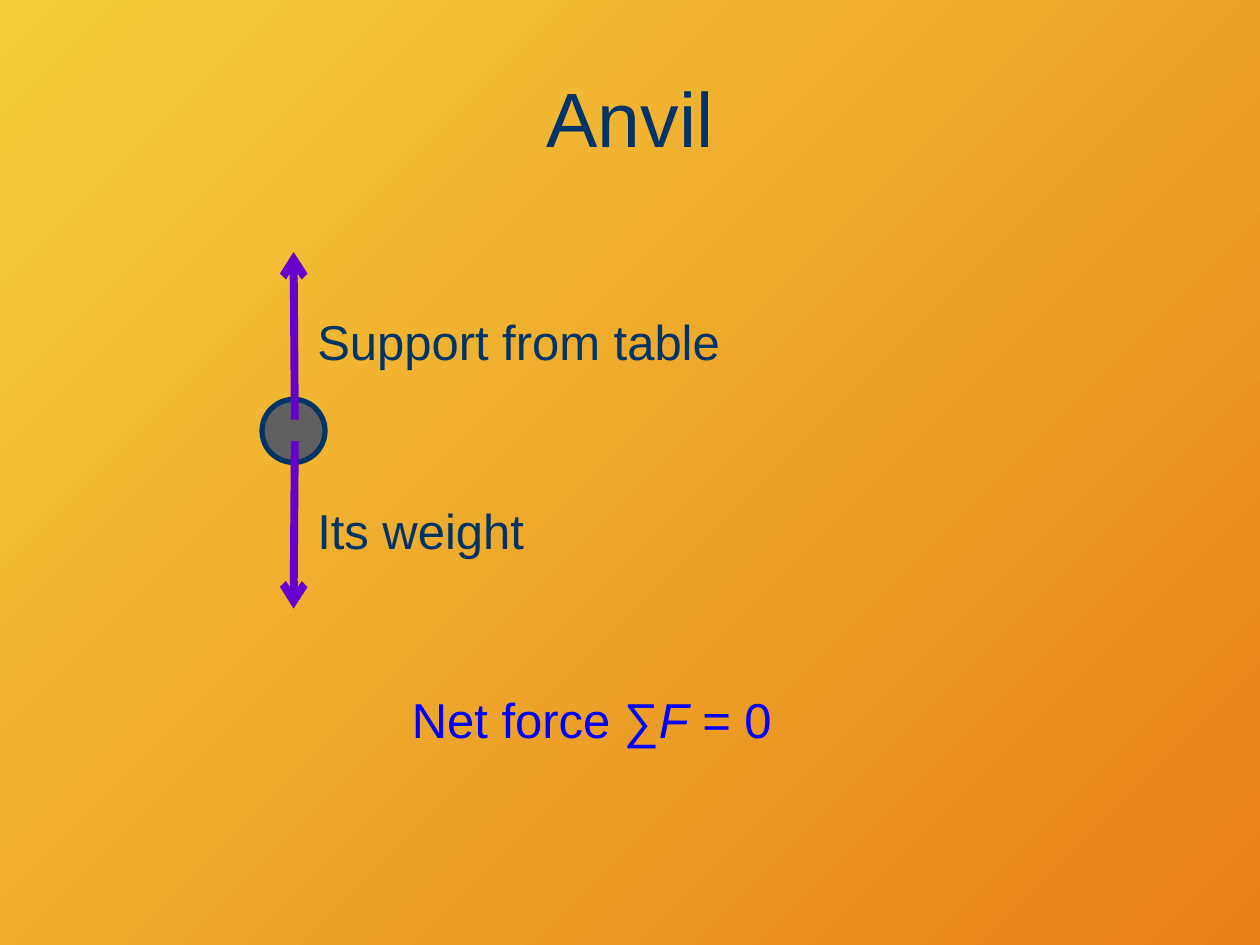
from dataclasses import dataclass

from lxml.etree import SubElement
from pptx import Presentation
from pptx.dml.color import RGBColor
from pptx.enum.shapes import MSO_CONNECTOR, MSO_SHAPE
from pptx.enum.text import MSO_ANCHOR, MSO_AUTO_SIZE, PP_ALIGN
from pptx.oxml.ns import qn
from pptx.slide import Slide
from pptx.util import Inches, Pt


@dataclass(frozen=True)
class Theme:
    font: str = "Arial"
    title_size: int = 44
    body_size: int = 28
    ink: str = "003366"
    force: str = "6600CC"
    result: str = "0000FF"
    anvil: str = "606060"
    glow: str = "F5CE3D"
    ember: str = "E88018"


@dataclass(frozen=True)
class Force:
    label: str
    label_top: float
    label_width: float
    start_y: float
    tip_y: float


THEME = Theme()
LABEL_LEFT, LABEL_HEIGHT = 2.42, 0.57
FORCE_START_X, FORCE_TIP_X = 2.34, 2.33
FORCES = (
    Force("Its weight", 3.92, 1.86, 3.5, 4.83),
    Force("Support from table", 2.42, 3.44, 3.33, 2),
)


def rgb(code: str) -> RGBColor:
    return RGBColor.from_string(code)


def paint_background(slide: Slide) -> None:
    fill = slide.background.fill
    fill.gradient()
    fill.gradient_angle = 315  # counter-clockwise: top left to bottom right
    for stop, color in zip(fill.gradient_stops, (THEME.glow, THEME.ember)):
        stop.color.rgb = rgb(color)


def add_text(slide: Slide, *runs: str, left: float, top: float, width: float,
             height: float = LABEL_HEIGHT, size: int = THEME.body_size,
             color: str = THEME.ink, align: PP_ALIGN = PP_ALIGN.LEFT,
             anchor: MSO_ANCHOR = MSO_ANCHOR.TOP, wrap: bool = False,
             italic_run: str = "") -> None:
    """Write the runs as one paragraph; the run equal to italic_run is italic."""
    box = slide.shapes.add_textbox(Inches(left), Inches(top), Inches(width), Inches(height))
    frame = box.text_frame
    frame.word_wrap = wrap
    frame.auto_size = MSO_AUTO_SIZE.NONE if wrap else MSO_AUTO_SIZE.SHAPE_TO_FIT_TEXT
    frame.vertical_anchor = anchor
    paragraph = frame.paragraphs[0]
    paragraph.alignment = align
    for text in runs:
        run = paragraph.add_run()
        run.text = text
        run.font.name = THEME.font
        run.font.size = Pt(size)
        run.font.italic = text == italic_run
        run.font.color.rgb = rgb(color)


def add_anvil(slide: Slide) -> None:
    anvil = slide.shapes.add_shape(MSO_SHAPE.OVAL, Inches(2.08), Inches(3.17),
                                   Inches(0.5), Inches(0.5))
    anvil.shadow.inherit = False
    anvil.fill.solid()
    anvil.fill.fore_color.rgb = rgb(THEME.anvil)
    anvil.line.color.rgb = rgb(THEME.ink)
    anvil.line.width = Pt(3)


def add_force(slide: Slide, force: Force) -> None:
    arrow = slide.shapes.add_connector(
        MSO_CONNECTOR.STRAIGHT, Inches(FORCE_START_X), Inches(force.start_y),
        Inches(FORCE_TIP_X), Inches(force.tip_y))
    arrow.line.color.rgb = rgb(THEME.force)
    arrow.line.width = Pt(4.5)
    SubElement(arrow.line._get_or_add_ln(), qn("a:tailEnd"), type="arrow")
    SubElement(arrow._element.spPr, qn("a:effectLst"))
    add_text(slide, force.label, left=LABEL_LEFT, top=force.label_top,
             width=force.label_width)


def main() -> None:
    deck = Presentation()
    deck.slide_width, deck.slide_height = Inches(10), Inches(7.5)
    slide = deck.slides.add_slide(deck.slide_layouts[6])
    paint_background(slide)
    add_text(slide, "Anvil", left=0.5, top=0.3, width=9, height=1.25,
             size=THEME.title_size, align=PP_ALIGN.CENTER,
             anchor=MSO_ANCHOR.MIDDLE, wrap=True)
    add_anvil(slide)
    for force in FORCES:
        add_force(slide, force)
    add_text(slide, "Net force ∑", "F", " = 0", left=3.17, top=5.42, width=3.09,
             color=THEME.result, italic_run="F")
    deck.save("out.pptx")


if __name__ == "__main__":
    main()
